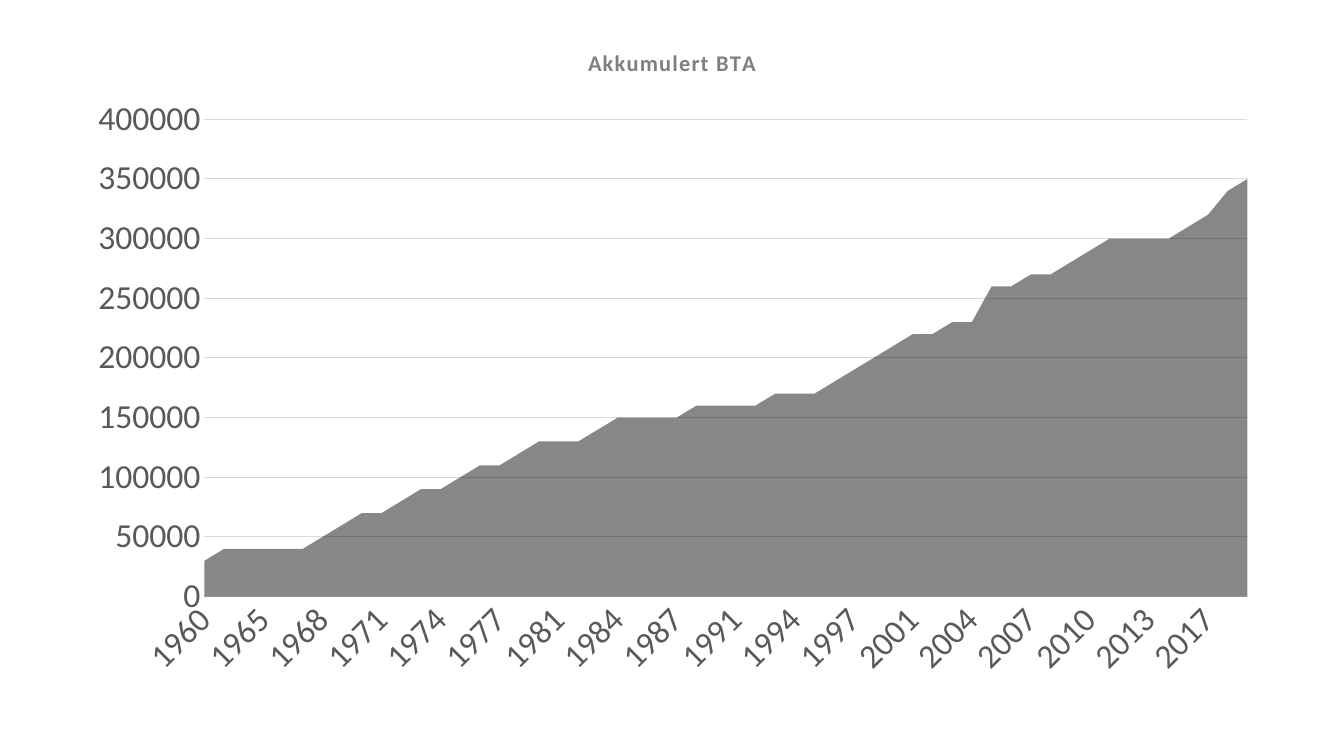
from dataclasses import dataclass

from lxml import etree
from pptx import Presentation
from pptx import util as u
from pptx.chart.data import CategoryChartData
from pptx.dml.color import RGBColor
from pptx.enum import chart as charts
from pptx.oxml import ns


@dataclass(frozen=True)
class Theme:
    font: str = "Calibri"
    area: str = "000000"
    area_opacity: int = 47
    title: str = "7F7F7F"
    label: str = "595959"
    grid: str = "D9D9D9"
    title_size: int = 16
    label_size: int = 24
    grid_width: float = 0.75


# Years with new floor area, and accumulated area in tens of thousands
SKIPPED_YEARS = {1962, 1964, 1979, 1989, 1999, 2014}
YEARS = [str(year) for year in range(1960, 2020) if year not in SKIPPED_YEARS]
AREA_STEPS = [
    3, 4, 4, 4, 4, 4, 5, 6, 7, 7, 8, 9, 9, 10, 11, 11, 12, 13,
    13, 13, 14, 15, 15, 15, 15, 16, 16, 16, 16, 17, 17, 17, 18, 19, 20, 21,
    22, 22, 23, 23, 26, 26, 27, 27, 28, 29, 30, 30, 30, 30, 31, 32, 34, 35,
]
ACCUMULATED = [step * 10000 for step in AREA_STEPS]


def add_xml(parent, tag, **attributes):
    return etree.SubElement(parent, ns.qn(tag), attributes)


class SlideBuilder:
    def __init__(self, slide, theme):
        self.slide = slide
        self.theme = theme

    def style_font(self, font, size, color, bold=False):
        font.name = self.theme.font
        font.size = u.Pt(size)
        font.bold = bold
        font.color.rgb = RGBColor.from_string(color)

    def add_area_chart(self, name, categories, values, left, top, width, height):
        data = CategoryChartData(number_format="0")
        data.categories = categories
        data.add_series(name, values)
        frame = self.slide.shapes.add_chart(
            charts.XL_CHART_TYPE.AREA, u.Inches(left), u.Inches(top),
            u.Inches(width), u.Inches(height), data)
        chart = frame.chart
        chart.has_legend = False
        self.style_font(chart.font, 10, self.theme.area)

        # Translucent area, so the gridlines show through
        fill = chart.plots[0].series[0].format.fill
        fill.solid()
        fill.fore_color.rgb = RGBColor.from_string(self.theme.area)
        color = chart.plots[0].series[0]._element.find(".//" + ns.qn("a:srgbClr"))
        add_xml(color, "a:alpha", val=str(self.theme.area_opacity * 1000))
        return chart

    def add_chart_title(self, chart, title):
        chart.has_title = True
        chart.chart_title.include_in_layout = False
        paragraph = chart.chart_title.text_frame.paragraphs[0]
        run = paragraph.add_run()
        run.text = title
        self.style_font(run.font, self.theme.title_size, self.theme.title, bold=True)
        run._r.get_or_add_rPr().set("spc", "100")

    def format_axis(self, axis):
        axis.major_tick_mark = charts.XL_TICK_MARK.NONE
        axis.minor_tick_mark = charts.XL_TICK_MARK.NONE
        axis.format.line.fill.background()
        self.style_font(axis.tick_labels.font, self.theme.label_size, self.theme.label)

    def format_year_axis(self, axis, interval):
        self.format_axis(axis)
        axis.has_major_gridlines = False
        body = axis._element.find(ns.qn("c:txPr")).find(ns.qn("a:bodyPr"))
        body.set("rot", str(-45 * 60000))
        body.set("vert", "horz")
        spacing = etree.Element(ns.qn("c:tickLblSkip"), val=str(interval))
        axis._element.find(ns.qn("c:noMultiLvlLbl")).addprevious(spacing)

    def format_value_axis(self, axis, maximum, step):
        self.format_axis(axis)
        axis.minimum_scale = 0
        axis.maximum_scale = maximum
        axis.major_unit = step
        axis.tick_labels.number_format = "0"
        axis.tick_labels.number_format_is_linked = False
        axis.has_major_gridlines = True
        line = axis.major_gridlines.format.line
        line.color.rgb = RGBColor.from_string(self.theme.grid)
        line.width = u.Pt(self.theme.grid_width)
        axis._element.find(ns.qn("c:crossBetween")).set("val", "midCat")

    def place_plot(self, chart, **fractions):
        plot_area = chart._chartSpace.chart.plotArea
        layout = plot_area.find(ns.qn("c:layout"))
        if layout is None:
            layout = etree.Element(ns.qn("c:layout"))
            plot_area.insert(0, layout)
        manual = add_xml(layout, "c:manualLayout")
        add_xml(manual, "c:layoutTarget", val="inner")
        for mode in ("xMode", "yMode"):
            add_xml(manual, "c:" + mode, val="edge")
        for side, fraction in fractions.items():
            add_xml(manual, "c:" + side, val=str(fraction))


def main():
    presentation = Presentation()
    presentation.slide_width = u.Inches(13.33)
    presentation.slide_height = u.Inches(7.5)
    slide = presentation.slides.add_slide(presentation.slide_layouts[6])
    builder = SlideBuilder(slide, Theme())

    # Area chart filling the slide
    title = "Akkumulert BTA"
    chart = builder.add_area_chart(
        title, YEARS, ACCUMULATED, left=0.72, top=0.25, width=11.89, height=6.67)
    builder.add_chart_title(chart, title)

    # Axes and plot position
    builder.format_year_axis(chart.category_axis, interval=3)
    builder.format_value_axis(chart.value_axis, maximum=400000, step=50000)
    builder.place_plot(chart, x=0.11, y=0.14, w=0.87, h=0.71)

    presentation.save("out.pptx")


if __name__ == "__main__":
    main()
